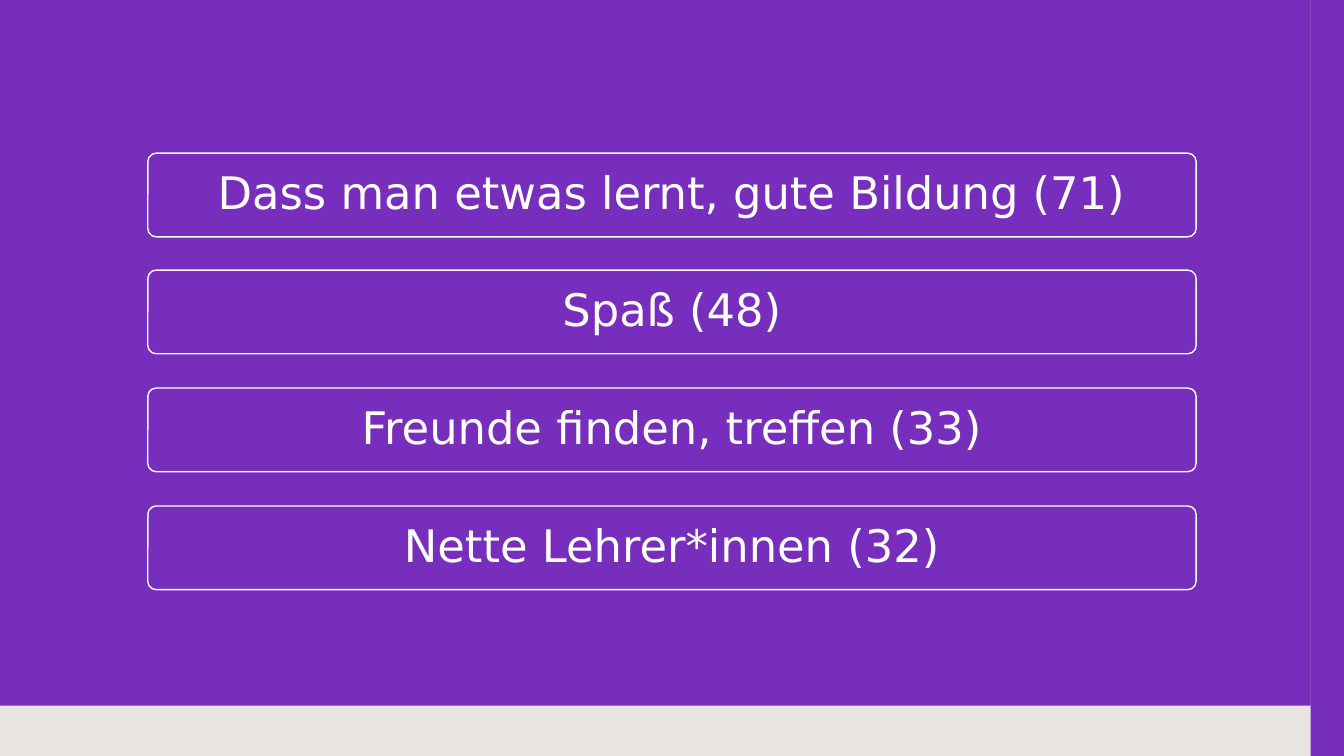
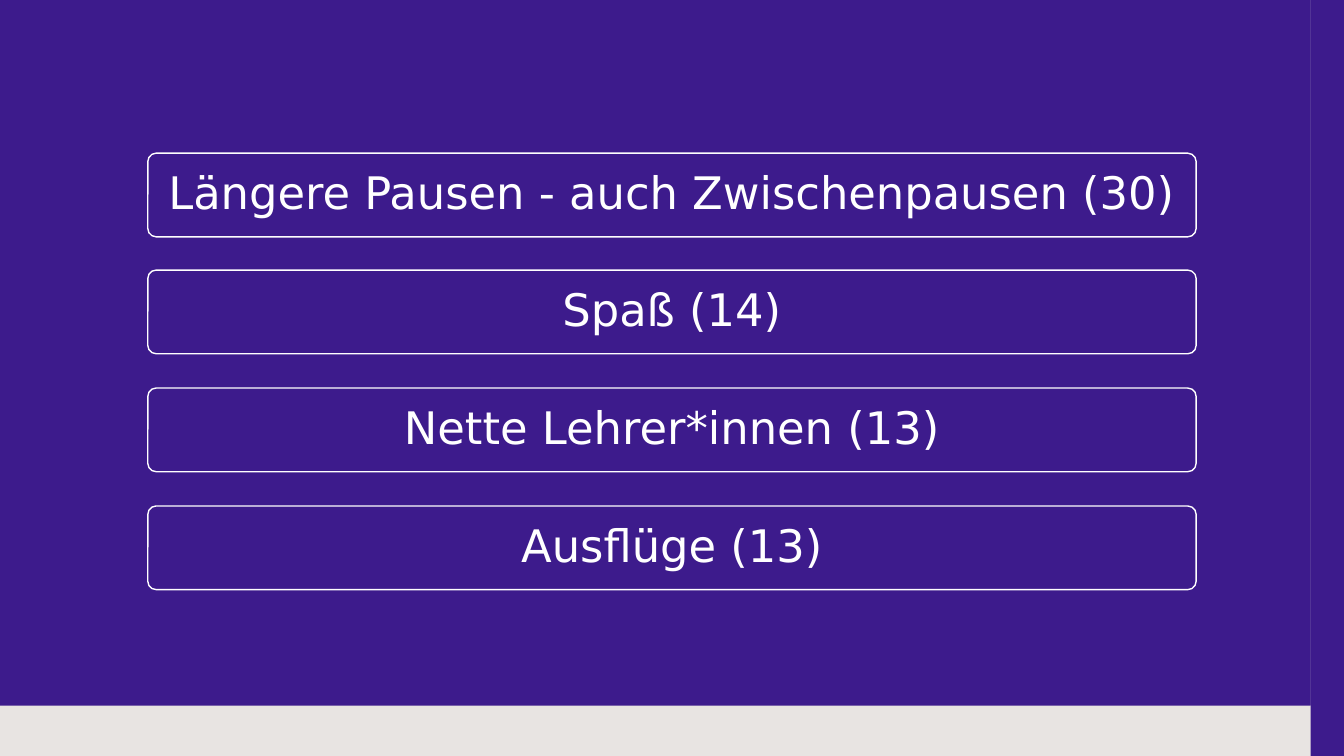
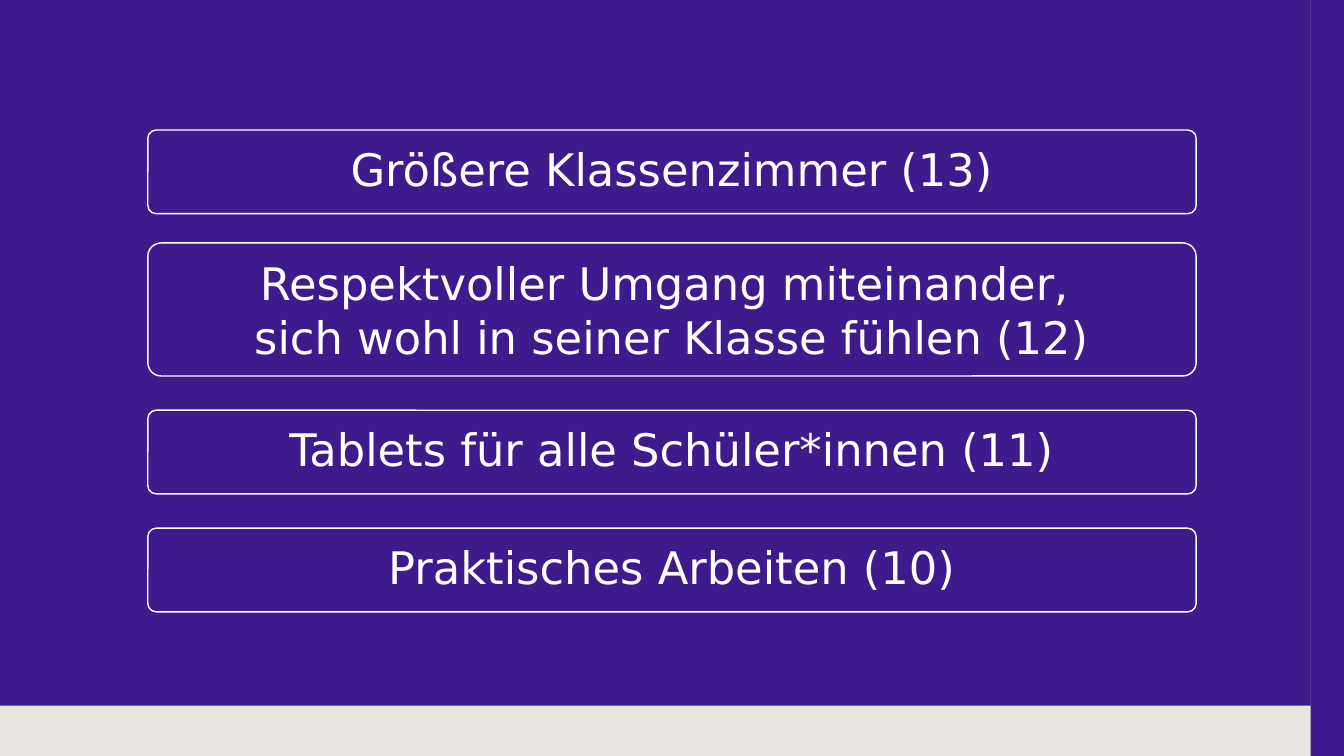
from pptx import Presentation
from pptx.dml.color import RGBColor
from pptx.enum.shapes import MSO_SHAPE
from pptx.enum.text import MSO_ANCHOR, PP_ALIGN
from pptx.util import Inches, Pt

VIOLET = RGBColor(0x78, 0x2E, 0xBC)
INDIGO = RGBColor(0x3D, 0x1B, 0x8C)
SAND = RGBColor(0xE8, 0xE4, 0xE2)
WHITE = RGBColor(0xFF, 0xFF, 0xFF)
FONT = "DejaVu Sans"

W, H = 13.33, 7.5
LEFT, WIDTH = 0.11 * W, 0.78 * W
GAP = 0.34
HEIGHTS = {1: 0.83, 2: 1.32}
SIDE, EDGE = 0.18, 0.17

SLIDES = [
    (VIOLET, 1.52, 0.33, [
        "Dass man etwas lernt, gute Bildung (71)",
        "Spaß (48)",
        "Freunde finden, treffen (33)",
        "Nette Lehrer*innen (32)",
    ]),
    (INDIGO, 1.52, 0.33, [
        "Längere Pausen - auch Zwischenpausen (30)",
        "Spaß (14)",
        "Nette Lehrer*innen (13)",
        "Ausflüge (13)",
    ]),
    (INDIGO, 1.29, 0.29, [
        "Größere Klassenzimmer (13)",
        "Respektvoller Umgang miteinander, \nsich wohl in seiner Klasse fühlen (12)",
        "Tablets für alle Schüler*innen (11)",
        "Praktisches Arbeiten (10)",
    ]),
]

deck = Presentation()
deck.slide_width, deck.slide_height = Inches(W), Inches(H)
blank = deck.slide_layouts[6]

for back, top, gap, answers in SLIDES:
    slide = deck.slides.add_slide(blank)
    slide.background.fill.solid()
    slide.background.fill.fore_color.rgb = back

    for answer in answers:
        lines = answer.split("\n")
        height = HEIGHTS[len(lines)]
        box = slide.shapes.add_shape(
            MSO_SHAPE.ROUNDED_RECTANGLE,
            Inches(LEFT), Inches(top), Inches(WIDTH), Inches(height))
        box.adjustments[0] = 0.1
        box.shadow.inherit = False
        box.fill.background()
        box.line.color.rgb = WHITE
        box.line.width = Pt(1)
        frame = box.text_frame
        frame.word_wrap = True
        frame.vertical_anchor = MSO_ANCHOR.TOP
        frame.margin_top = Inches(0.09)
        frame.text = answer
        for para in frame.paragraphs:
            para.alignment = PP_ALIGN.CENTER
            para.font.name = FONT
            para.font.size = Pt(32)
            para.font.color.rgb = WHITE
        top += height + gap
        gap = GAP

pen = slide.shapes.build_freeform(SIDE, EDGE, scale=Inches(1))
pen.add_line_segments([(SIDE, H - EDGE), (W - SIDE, H - EDGE), (W - SIDE, EDGE)])
pen.move_to(0, 0)
pen.add_line_segments([(W, 0), (W, H), (0, H)])
border = pen.convert_to_shape()
border.shadow.inherit = False
border.fill.solid()
border.fill.fore_color.rgb = SAND
border.line.fill.background()
deck.slide_master.shapes.element.insert(2, border.element)

deck.save("out.pptx")
